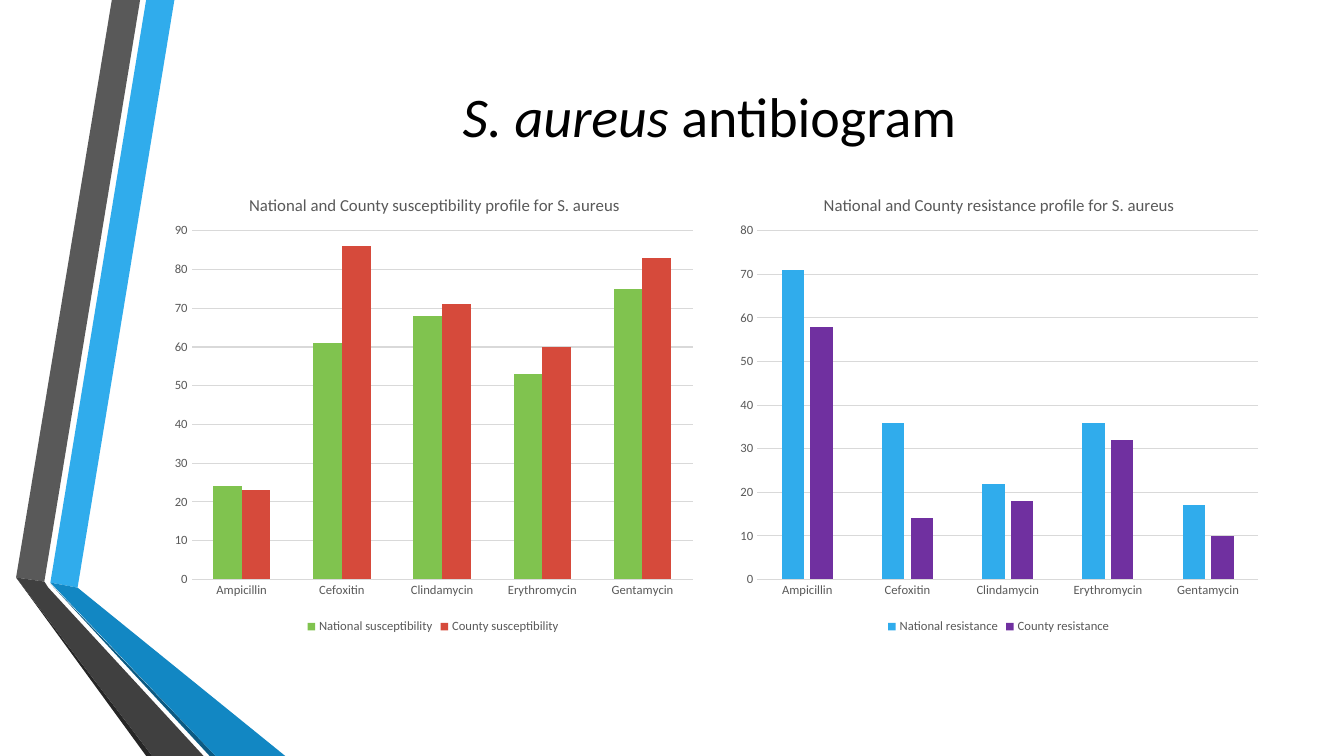
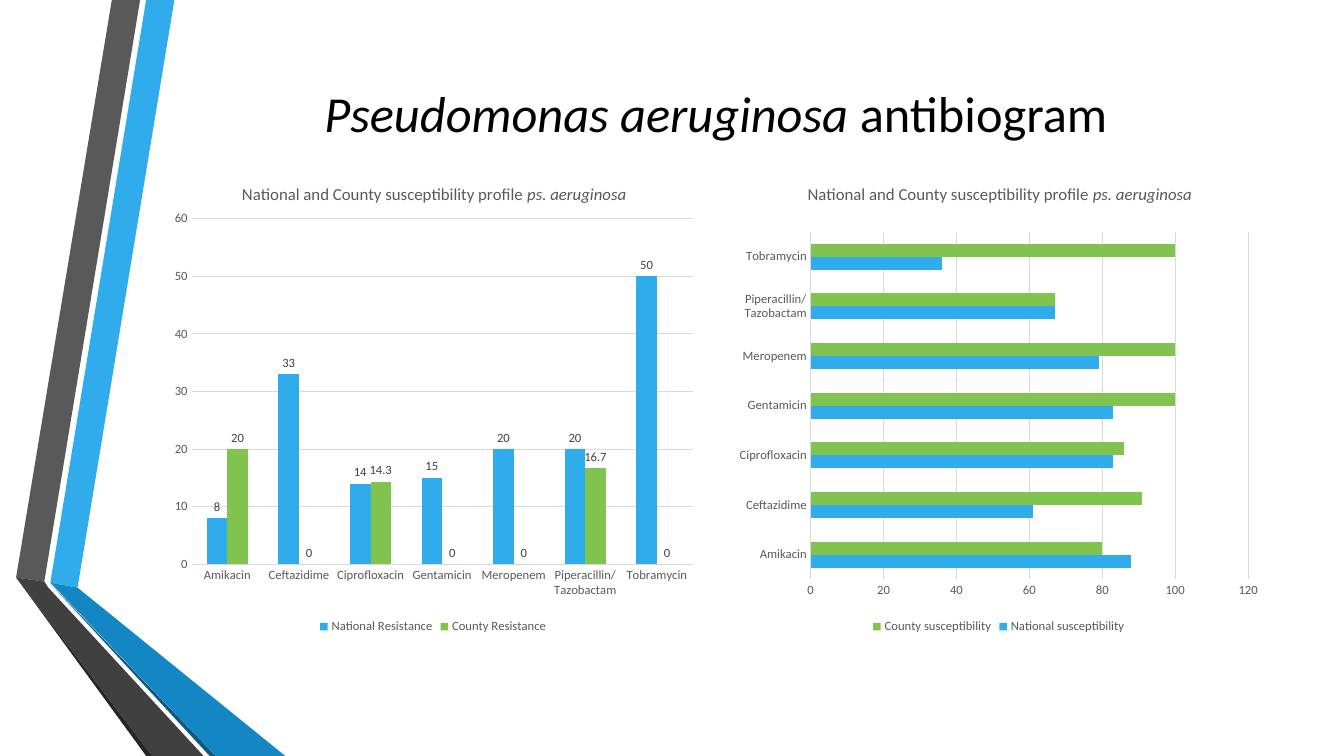
from lxml.etree import fromstring
from pptx import Presentation
from pptx.chart.data import CategoryChartData
from pptx.dml.color import RGBColor
from pptx.enum.chart import XL_CHART_TYPE as ChartType
from pptx.enum.chart import XL_LABEL_POSITION as LabelPosition
from pptx.enum.chart import XL_LEGEND_POSITION as LegendPosition
from pptx.enum.chart import XL_TICK_MARK as TickMark
from pptx.enum.text import MSO_ANCHOR as Anchor
from pptx.enum.text import PP_ALIGN as Align
from pptx.util import Pt

PX = 9144  # 100 px to the inch
FONT = "Calibri"
COLORS = {
    "black": "000000", "label": "404040", "muted": "595959", "grid": "D9D9D9",
    "blue": "30ACEC", "green": "80C34F", "red": "D64A3B", "purple": "7030A0",
    "deep blue": "1287C3", "navy": "0C5A82", "charcoal": "404040", "coal": "262626",
}
CHART_NS = "http://schemas.openxmlformats.org/drawingml/2006/chart"

# Ribbon bands along the left edge: colour, outline points
BANDS = [
    ("blue", [(50, 578), (77, 583), (173, 0), (145, 0)]),
    ("muted", [(139, 0), (111, 0), (16, 573), (44, 577)]),
    ("coal", [(16, 573), (145, 750), (151, 750)]),
    ("navy", [(50, 579), (208, 750), (214, 750)]),
    ("deep blue", [(50, 578), (214, 750), (283, 750), (77, 583)]),
    ("charcoal", [(16, 573), (151, 750), (202, 750), (48, 583), (44, 577)]),
]

# Shared positions
LEFT, CONTENT_WIDTH, TITLE_TOP = 162, 1096, 75
CHART_WIDTH, CHART_BOTTOM = 535, 633
CHART_STEP = CONTENT_WIDTH - CHART_WIDTH
CHART_TITLE_TOP = 21

AUREUS_DRUGS = ["Ampicillin", "Cefoxitin", "Clindamycin", "Erythromycin", "Gentamycin"]
AERUGINOSA_DRUGS = ["Amikacin", "Ceftazidime", "Ciprofloxacin", "Gentamicin",
                    "Meropenem", "Piperacillin/Tazobactam", "Tobramycin"]
AERUGINOSA_TITLE = [("National and County susceptibility profile ", False),
                    ("ps. aeruginosa", True)]

# Text pieces are (text, italic); "plot" is left, top, width, height in the chart
SLIDES = [
    {
        "title": [("S. aureus ", True), ("antibiogram ", False)],
        "size": 40, "title_height": 78, "chart_top": 168, "drugs": AUREUS_DRUGS,
        "charts": [
            {"title": [("National and County susceptibility profile for S. aureus", False)],
             "title_left": 82, "plot": (28, 61, 497, 346), "max": 90, "step": 10,
             "gap": 150, "overlap": 0,
             "series": [("National susceptibility", "green", [24, 61, 68, 53, 75]),
                        ("County susceptibility", "red", [23, 86, 71, 60, 83])]},
            {"title": [("National and County resistance profile for S. aureus", False)],
             "title_left": 91, "plot": (28, 61, 497, 346), "max": 80, "step": 10,
             "gap": 219, "overlap": -27, "axis_line": True,
             "series": [("National resistance", "blue", [71, 36, 22, 36, 17]),
                        ("County resistance", "purple", [58, 14, 18, 32, 10])]},
        ],
    },
    {
        "title": [("Pseudomonas aeruginosa ", True), ("antibiogram", False)],
        "size": 36, "title_height": 73, "chart_top": 157, "drugs": AERUGINOSA_DRUGS,
        "charts": [
            {"title": AERUGINOSA_TITLE,
             "title_left": 75, "plot": (28, 60, 497, 343), "max": 60, "step": 10,
             "gap": 150, "overlap": 0, "labels": True,
             "series": [("National Resistance", "blue", [8, 33, 14, 15, 20, 20, 50]),
                        ("County Resistance", "green", [20, 0, 14.3, 0, 0, 16.7, 0])]},
            {"title": AERUGINOSA_TITLE, "kind": ChartType.BAR_CLUSTERED,
             "title_left": 75, "plot": (81, 73, 434, 345), "max": 120, "step": 20,
             "gap": 182, "overlap": 0, "axis_line": True,
             "series": [("National susceptibility", "blue", [88, 61, 83, 83, 79, 67, 36]),
                        ("County susceptibility", "green", [80, 91, 86, 100, 100, 67, 100])]},
        ],
    },
]


def rgb(name):
    return RGBColor.from_string(COLORS[name])


def style_font(font, size, color):
    font.name, font.size, font.bold = FONT, Pt(size), False
    font.color.rgb = rgb(color)


def write_pieces(para, pieces, size, color):
    style_font(para.font, size, color)
    for text, italic in pieces:
        span = para.add_run()
        span.text = text
        span.font.italic = italic


def set_layout(parent, index, target, **fractions):
    """Give a chart part a fixed place, as fractions of the chart's size."""
    for old in parent.findall(f"{{{CHART_NS}}}layout"):
        parent.remove(old)
    inner = f'<c:layoutTarget val="{target}"/>' if target else ""
    modes = "".join(f'<c:{key}Mode val="edge"/>' for key in "xy")
    sizes = "".join(f'<c:{key} val="{value:.4f}"/>' for key, value in fractions.items())
    parent.insert(index, fromstring(
        f'<c:layout xmlns:c="{CHART_NS}"><c:manualLayout>'
        f"{inner}{modes}{sizes}</c:manualLayout></c:layout>"))


def add_bands(page):
    for color, points in BANDS:
        builder = page.shapes.build_freeform(*points[0], scale=PX)
        builder.add_line_segments(points[1:], close=True)
        band = builder.convert_to_shape()
        band.fill.solid()
        band.fill.fore_color.rgb = rgb(color)
        band.line.fill.background()
        band.shadow.inherit = False


def add_title(page, content):
    box = page.shapes.add_textbox(LEFT * PX, TITLE_TOP * PX,
                                  CONTENT_WIDTH * PX, content["title_height"] * PX)
    frame = box.text_frame
    frame.word_wrap = True
    frame.vertical_anchor = Anchor.MIDDLE
    para = frame.paragraphs[0]
    para.alignment = Align.CENTER
    write_pieces(para, content["title"], content["size"], "black")


def style_axes(chart, content):
    categories, values = chart.category_axis, chart.value_axis
    for axis in (categories, values):
        axis.major_tick_mark = axis.minor_tick_mark = TickMark.NONE
        style_font(axis.tick_labels.font, 9, "muted")
        axis.format.line.fill.background()
    categories.has_major_gridlines = False
    values.has_major_gridlines = True
    lines = [values.major_gridlines.format.line]
    if content.get("axis_line"):
        lines.append(categories.format.line)
    for line in lines:
        line.color.rgb = rgb("grid")
        line.width = Pt(0.75)
    values.minimum_scale, values.maximum_scale = 0, content["max"]
    values.major_unit = content["step"]


def add_bar_chart(page, content, drugs, left, top):
    height = CHART_BOTTOM - top
    data = CategoryChartData()
    data.categories = drugs
    for name, _, numbers in content["series"]:
        data.add_series(name, numbers)
    kind = content.get("kind", ChartType.COLUMN_CLUSTERED)
    chart = page.shapes.add_chart(kind, left * PX, top * PX,
                                  CHART_WIDTH * PX, height * PX, data).chart
    style_font(chart.font, 10, "black")

    # Title and legend
    chart.has_title = True
    title = chart.chart_title
    write_pieces(title.text_frame.paragraphs[0], content["title"], 12, "muted")
    title.include_in_layout = False
    set_layout(title._element, 1, None, x=content["title_left"] / CHART_WIDTH,
               y=CHART_TITLE_TOP / height)
    chart.has_legend = True
    chart.legend.position = LegendPosition.BOTTOM
    chart.legend.include_in_layout = False
    style_font(chart.legend.font, 9, "muted")

    # Axes and bars
    style_axes(chart, content)
    plot = chart.plots[0]
    plot.vary_by_categories = False
    plot.gap_width, plot.overlap = content["gap"], content["overlap"]
    for series, (_, color, _) in zip(plot.series, content["series"]):
        series.format.fill.solid()
        series.format.fill.fore_color.rgb = rgb(color)
        series.invert_if_negative = False
        if content.get("labels"):
            labels = series.data_labels
            labels.show_value = True
            labels.position = LabelPosition.OUTSIDE_END
            style_font(labels.font, 9, "label")
    x, y, w, h = content["plot"]
    set_layout(chart._chartSpace.chart.plotArea, 0, "inner", x=x / CHART_WIDTH,
               y=y / height, w=w / CHART_WIDTH, h=h / height)


def main():
    deck = Presentation()
    deck.slide_width, deck.slide_height = 1333 * PX, 750 * PX
    for content in SLIDES:
        page = deck.slides.add_slide(deck.slide_layouts[6])
        add_bands(page)
        add_title(page, content)
        for column, chart in enumerate(content["charts"]):
            add_bar_chart(page, chart, content["drugs"],
                          LEFT + column * CHART_STEP, content["chart_top"])
    deck.save("out.pptx")


if __name__ == "__main__":
    main()
